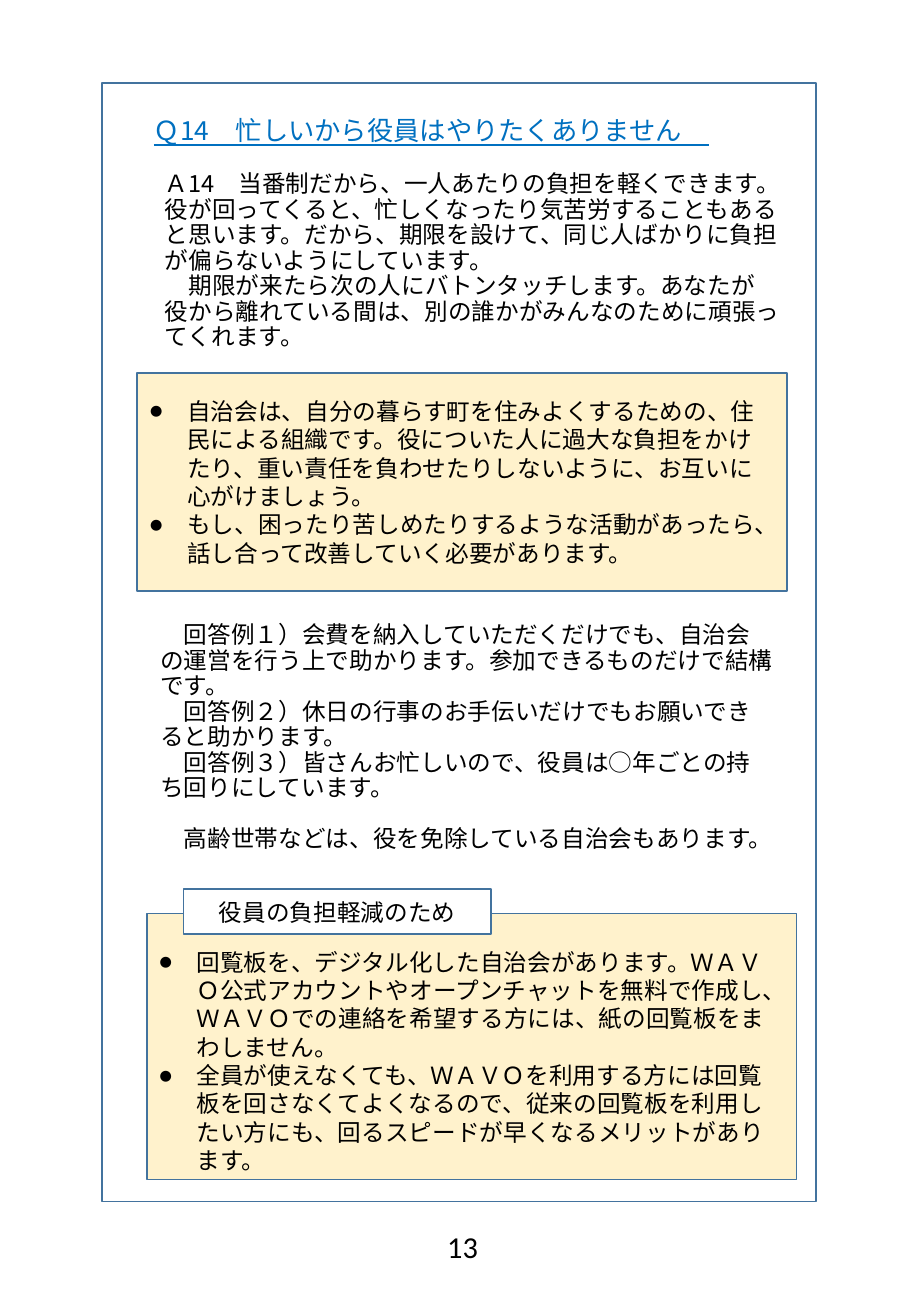
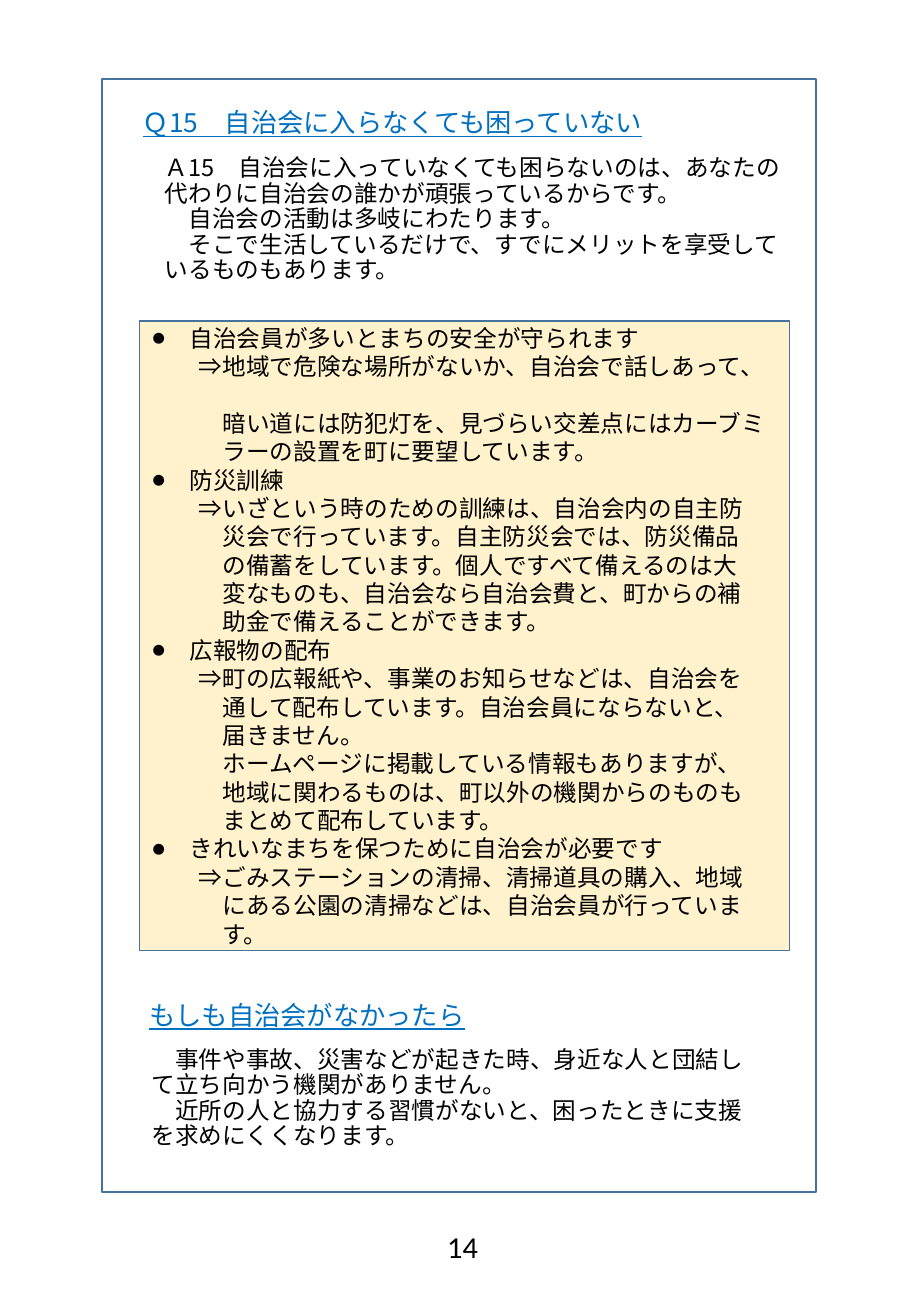
from lxml import etree
from pptx import Presentation
from pptx import util as u
from pptx.dml.color import RGBColor
from pptx.enum import shapes, text
from pptx.oxml.ns import qn

COLORS = {"paper": "FFFFFF", "note": "FFF2CC", "border": "43739E",
          "title": "0070C0", "ink": "000000"}
JAPANESE, LATIN = "Noto Sans CJK JP", "Calibri"

# Text styles: size, line pitch in points, colour, underline, font
STYLES = {
    "title": (15.6, 16.8, "title", True, JAPANESE),
    "answer": (14, 15.1, "ink", None, JAPANESE),
    "note": (14, 16.8, "ink", None, JAPANESE),
    "page": (18, 22, "ink", None, LATIN),
}
# Paragraph layouts: left margin and first-line indent in points
LAYOUTS = {"plain": (0, 0), "indent": (0, 14), "bullet": (22.5, -22.5),
           "arrow": (42, -14), "follow": (42, 0)}
TOP, MIDDLE, BOTTOM = (text.MSO_ANCHOR.TOP, text.MSO_ANCHOR.MIDDLE,
                       text.MSO_ANCHOR.BOTTOM)
CENTER = text.PP_ALIGN.CENTER


def write(shape, style, paragraphs, anchor=TOP, align=text.PP_ALIGN.LEFT):
    """Fill a shape with (layout, text) pairs; a third item is a gap in lines."""
    size, pitch, color, underline, face = STYLES[style]
    frame = shape.text_frame
    frame.word_wrap = True
    frame.vertical_anchor = anchor
    for index, (layout, words, *gap) in enumerate(paragraphs):
        paragraph = frame.paragraphs[0] if index == 0 else frame.add_paragraph()
        paragraph.text = words
        paragraph.alignment = align
        paragraph.line_spacing = u.Pt(pitch)
        if gap:
            paragraph.space_before = u.Pt(pitch * gap[0])
        props = paragraph._p.get_or_add_pPr()
        margin, indent = LAYOUTS[layout]
        props.set("marL", str(u.Pt(margin)))
        props.set("indent", str(u.Pt(indent)))
        if layout == "bullet":
            etree.SubElement(props, qn("a:buFont")).set("typeface", LATIN)
            etree.SubElement(props, qn("a:buChar")).set("char", "●")
        font = paragraph.font
        font.size = u.Pt(size)
        font.underline = underline
        font.color.rgb = RGBColor.from_string(COLORS[color])
        font.name = face
        east_asian = etree.SubElement(props.find(qn("a:defRPr")), qn("a:ea"))
        east_asian.set("typeface", face)


def add_panel(slide, left, top, width, height, fill):
    panel = slide.shapes.add_shape(shapes.MSO_SHAPE.RECTANGLE, u.Cm(left),
                                   u.Cm(top), u.Cm(width), u.Cm(height))
    panel.shadow.inherit = False
    panel.fill.solid()
    panel.fill.fore_color.rgb = RGBColor.from_string(COLORS[fill])
    panel.line.color.rgb = RGBColor.from_string(COLORS["border"])
    panel.line.width = u.Pt(1)
    return panel


# Content of each page; positions are left, top, width, height in cm
NOTE_WIDTH = 13.59
pages = [
    {
        "number": "13",
        "frame": (1.73, 23.39),
        "titles": [(2.97, 2.34, "Ｑ14　忙しいから役員はやりたくありません　")],
        "answers": [
            ((3.2, 3.89, 13.34, 3.56), [
                ("plain", "Ａ14　当番制だから、一人あたりの負担を軽くできます。役が回ってくると、忙しくなったり気苦労することもあると思います。だから、期限を設けて、同じ人ばかりに負担が偏らないようにしています。"),
                ("indent", "期限が来たら次の人にバトンタッチします。あなたが役から離れている間は、別の誰かがみんなのために頑張ってくれます。"),
            ]),
            ((3.1, 14.55, 13.34, 3.4), [
                ("indent", "回答例１）会費を納入していただくだけでも、自治会の運営を行う上で助かります。参加できるものだけで結構です。"),
                ("indent", "回答例２）休日の行事のお手伝いだけでもお願いできると助かります。"),
                ("indent", "回答例３）皆さんお忙しいので、役員は○年ごとの持ち回りにしています。"),
                ("indent", "高齢世帯などは、役を免除している自治会もあります。", 1),
            ]),
        ],
        "notes": [
            ((2.87, 7.8, NOTE_WIDTH, 4.55), None, [
                ("bullet", "自治会は、自分の暮らす町を住みよくするための、住民による組織です。役についた人に過大な負担をかけたり、重い責任を負わせたりしないように、お互いに心がけましょう。"),
                ("bullet", "もし、困ったり苦しめたりするような活動があったら、話し合って改善していく必要があります。"),
            ]),
            ((3.07, 19.1, NOTE_WIDTH, 5.56), "役員の負担軽減のため", [
                ("bullet", "回覧板を、デジタル化した自治会があります。ＷＡＶＯ公式アカウントやオープンチャットを無料で作成し、ＷＡＶＯでの連絡を希望する方には、紙の回覧板をまわしません。"),
                ("bullet", "全員が使えなくても、ＷＡＶＯを利用する方には回覧板を回さなくてよくなるので、従来の回覧板を利用したい方にも、回るスピードが早くなるメリットがあります。"),
            ]),
        ],
    },
    {
        "number": "14",
        "frame": (1.65, 23.27),
        "titles": [(2.74, 2.16, "Ｑ15　自治会に入らなくても困っていない"),
                   (2.87, 20.82, "もしも自治会がなかったら")],
        "answers": [
            ((3.2, 3.1, 13.64, 2.95), [
                ("plain", "Ａ15　自治会に入っていなくても困らないのは、あなたの代わりに自治会の誰かが頑張っているからです。"),
                ("indent", "自治会の活動は多岐にわたります。"),
                ("indent", "そこで生活しているだけで、すでにメリットを享受しているものもあります。"),
            ]),
            ((2.92, 21.21, 13.34, 2.95), [
                ("indent", "事件や事故、災害などが起きた時、身近な人と団結して立ち向かう機関がありません。"),
                ("indent", "近所の人と協力する習慣がないと、困ったときに支援を求めにくくなります。"),
            ]),
        ],
        "notes": [
            ((2.92, 6.71, NOTE_WIDTH, 13.16), None, [
                ("bullet", "自治会員が多いとまちの安全が守られます"),
                ("arrow", "⇒地域で危険な場所がないか、自治会で話しあって、"),
                ("follow", "暗い道には防犯灯を、見づらい交差点にはカーブミ\vラーの設置を町に要望しています。", 1),
                ("bullet", "防災訓練"),
                ("arrow", "⇒いざという時のための訓練は、自治会内の自主防\v災会で行っています。自主防災会では、防災備品\vの備蓄をしています。個人ですべて備えるのは大\v変なものも、自治会なら自治会費と、町からの補\v助金で備えることができます。"),
                ("bullet", "広報物の配布"),
                ("arrow", "⇒町の広報紙や、事業のお知らせなどは、自治会を\v通して配布しています。自治会員にならないと、\v届きません。"),
                ("follow", "ホームページに掲載している情報もありますが、\v地域に関わるものは、町以外の機関からのものも\vまとめて配布しています。"),
                ("bullet", "きれいなまちを保つために自治会が必要です"),
                ("arrow", "⇒ごみステーションの清掃、清掃道具の購入、地域\vにある公園の清掃などは、自治会員が行っていま\vす。"),
            ]),
        ],
    },
]

deck = Presentation()
deck.slide_width, deck.slide_height = u.Cm(19.05), u.Cm(27.51)

for page in pages:
    slide = deck.slides.add_slide(deck.slide_layouts[6])

    # Page frame
    frame_top, frame_height = page["frame"]
    add_panel(slide, 2.13, frame_top, 14.94, frame_height, "paper")

    # Questions
    for left, top, words in page["titles"]:
        title = slide.shapes.add_textbox(u.Cm(left), u.Cm(top), u.Cm(13.72), u.Cm(1))
        write(title, "title", [("plain", words)])

    # Answers
    for place, paragraphs in page["answers"]:
        answer = slide.shapes.add_textbox(*map(u.Cm, place))
        write(answer, "answer", paragraphs, BOTTOM)

    # Highlighted notes, with an optional label on the upper edge
    for place, heading, paragraphs in page["notes"]:
        note = add_panel(slide, *place, "note")
        write(note, "note", paragraphs, MIDDLE)
        if heading:
            note.text_frame.margin_top = u.Cm(0.72)
            label = add_panel(slide, place[0] + 0.77, place[1] - 0.51, 6.43, 0.94, "paper")
            write(label, "note", [("plain", heading)], MIDDLE, CENTER)

    # Page number
    number = slide.shapes.add_textbox(u.Cm(8.71), u.Cm(25.53), u.Cm(1.93), u.Cm(1.02))
    write(number, "page", [("plain", page["number"])], align=CENTER)

deck.save("out.pptx")
